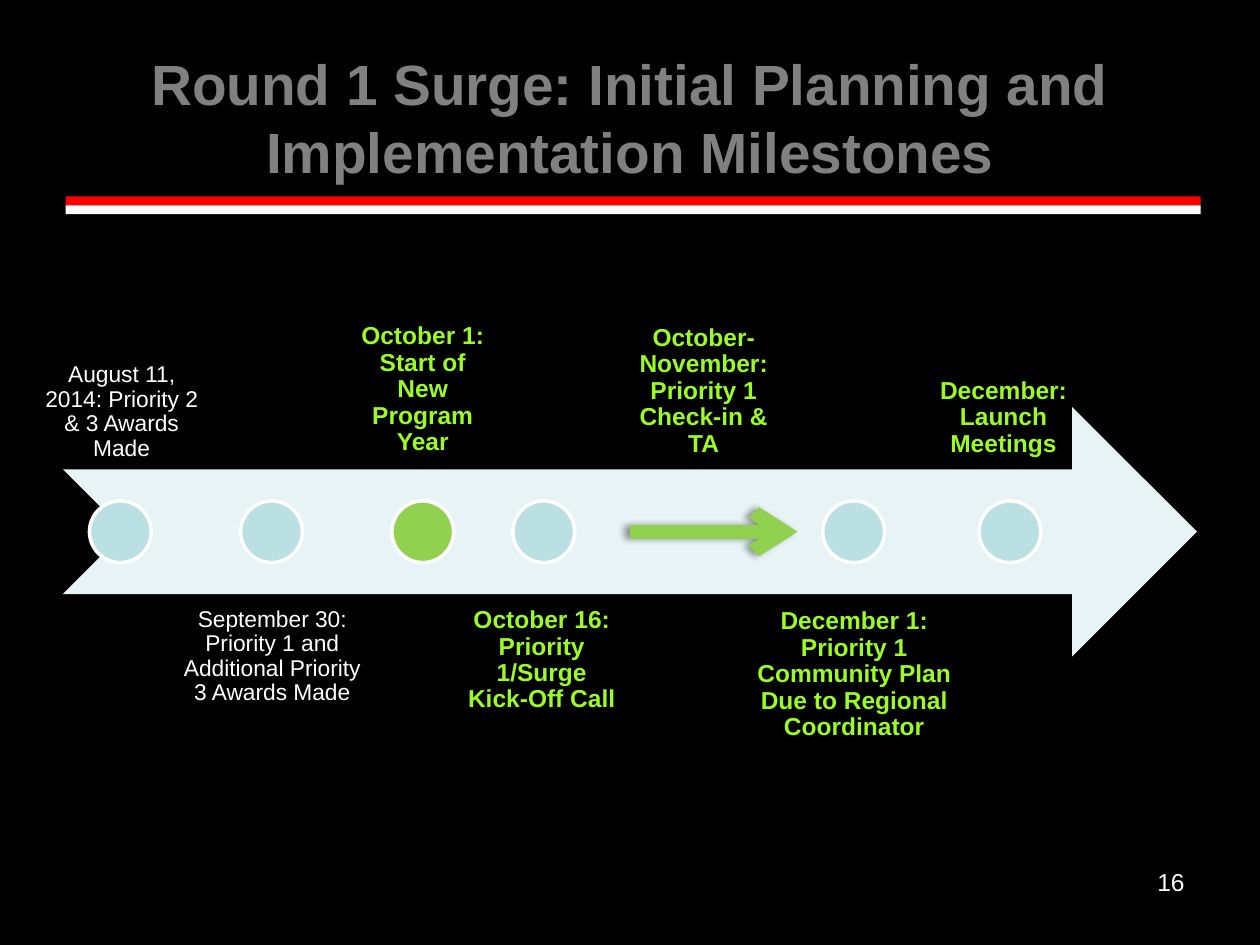
from lxml import etree
from pptx import Presentation
from pptx.dml.color import RGBColor
from pptx.enum.shapes import MSO_CONNECTOR, MSO_SHAPE
from pptx.enum.text import MSO_ANCHOR, PP_ALIGN
from pptx.oxml.ns import qn
from pptx.util import Inches, Pt

RECT, OVAL, BAND = MSO_SHAPE.RECTANGLE, MSO_SHAPE.OVAL, MSO_SHAPE.NOTCHED_RIGHT_ARROW
TOP, MIDDLE, BOTTOM = MSO_ANCHOR.TOP, MSO_ANCHOR.MIDDLE, MSO_ANCHOR.BOTTOM
CENTER, RIGHT = PP_ALIGN.CENTER, PP_ALIGN.RIGHT

COLORS = {
    "background": "000000", "title": "808080", "red": "FF0000", "white": "FFFFFF",
    "band": "E7F3F4", "dot": "BBE0E3", "green": "92D050", "lime": "9AFC24",
}
TITLE = "Round 1 Surge: Initial Planning and Implementation Milestones"
PAGE = "16"
AWARD = {"size": Pt(13), "bold": False}, "white"
SURGE = {"size": Pt(14), "bold": True}, "lime"
# label, style, label centre, label width, label edge facing the band, dot centre, dot colour
# Lengths are in columns: the slide is 100 columns wide and 75 rows high.
MILESTONES = [
    ("August 11, 2014: Priority 2 & 3 Awards Made", AWARD, 9.65, 14.1, 37.6, 9.55, "dot"),
    ("September 30: Priority 1 and Additional Priority 3 Awards Made",
     AWARD, 21.6, 16.4, 47.2, 21.55, "dot"),
    ("October 1: Start of New Program Year", SURGE, 33.55, 13.3, 37.2, 33.55, "green"),
    ("October 16: Priority 1/Surge Kick-Off Call", SURGE, 43, 14, 47.2, 43.15, "dot"),
    ("October-November: Priority 1 Check-in & TA", SURGE, 55.85, 15.1, 37.3, None, None),
    ("December 1: Priority 1 Community Plan Due to Regional Coordinator",
     SURGE, 67.8, 19, 47.3, 67.75, "dot"),
    ("December: Launch Meetings", SURGE, 79.65, 12.7, 37.3, 80.15, "dot"),
]
AXIS, DOT, LABEL_HEIGHT = 42.2, 4.9, 19.8
CHECK_IN = (50, 63.3)

prs = Presentation()
prs.slide_width, prs.slide_height = Inches(10), Inches(7.5)
COLUMN = prs.slide_width / 100
slide = prs.slides.add_slide(prs.slide_layouts[6])
slide.background.fill.solid()
slide.background.fill.fore_color.rgb = RGBColor.from_string(COLORS["background"])


def grid(*cells):
    return [round(cell * COLUMN) for cell in cells]


def add_solid(kind, box, color, outline=None):
    shape = slide.shapes.add_shape(kind, *grid(*box))
    shape.shadow.inherit = False
    shape.fill.solid()
    shape.fill.fore_color.rgb = RGBColor.from_string(COLORS[color])
    if outline:
        shape.line.color.rgb = RGBColor.from_string(COLORS[outline])
        shape.line.width = Pt(2)
    else:
        shape.line.fill.background()


def add_text(text, box, style, align, anchor, spacing=None, inset=0.05):
    font_values, color = style
    frame = slide.shapes.add_textbox(*grid(*box)).text_frame
    frame.word_wrap, frame.vertical_anchor = True, anchor
    frame.margin_top = frame.margin_bottom = Inches(inset)
    frame.margin_left = frame.margin_right = Inches(0.1)
    paragraph = frame.paragraphs[0]
    paragraph.alignment, paragraph.line_spacing = align, spacing
    run = paragraph.add_run()
    run.text = text
    run.font.name = "Arial"
    run.font.color.rgb = RGBColor.from_string(COLORS[color])
    for key, value in font_values.items():
        setattr(run.font, key, value)


def add_check_in_arrow():
    start, end, level = grid(*CHECK_IN, AXIS)
    arrow = slide.shapes.add_connector(MSO_CONNECTOR.STRAIGHT, start, level, end, level)
    arrow.line.color.rgb = RGBColor.from_string(COLORS["green"])
    arrow.line.width = Pt(8)
    etree.SubElement(arrow.line._get_or_add_ln(), qn("a:tailEnd"), type="arrow")
    effects = etree.SubElement(arrow._element.spPr, qn("a:effectLst"))
    shadow = etree.SubElement(
        effects, qn("a:outerShdw"), blurRad=str(Pt(4)), dist=str(Pt(3)),
        dir="10800000", algn="r", rotWithShape="0")
    black = etree.SubElement(shadow, qn("a:srgbClr"), val=COLORS["background"])
    etree.SubElement(black, qn("a:alpha"), val="40000")


for row, stripe in enumerate(("red", "white")):
    add_solid(RECT, (5.2, 15.6 + row * 0.7, 90.1, 0.7), stripe)
add_text(TITLE, (5, 3, 90, 12.5), ({"size": Pt(32.4), "bold": True}, "title"), CENTER, MIDDLE)

add_solid(BAND, (5, AXIS - LABEL_HEIGHT / 2, 90, LABEL_HEIGHT), "band")
for label, style, center, width, edge, dot_center, dot_color in MILESTONES:
    above = edge < AXIS
    top = edge - LABEL_HEIGHT if above else edge
    add_text(label, (center - width / 2, top, width, LABEL_HEIGHT), style, CENTER,
             BOTTOM if above else TOP, spacing=0.9, inset=0.1)
    if dot_color:
        add_solid(OVAL, (dot_center - DOT / 2, AXIS - DOT / 2, DOT, DOT), dot_color, "white")

add_text(PAGE, (71.7, 68.3, 23.3, 5.2), ({"size": Pt(14)}, "white"), RIGHT, TOP)
add_check_in_arrow()
prs.save("out.pptx")
